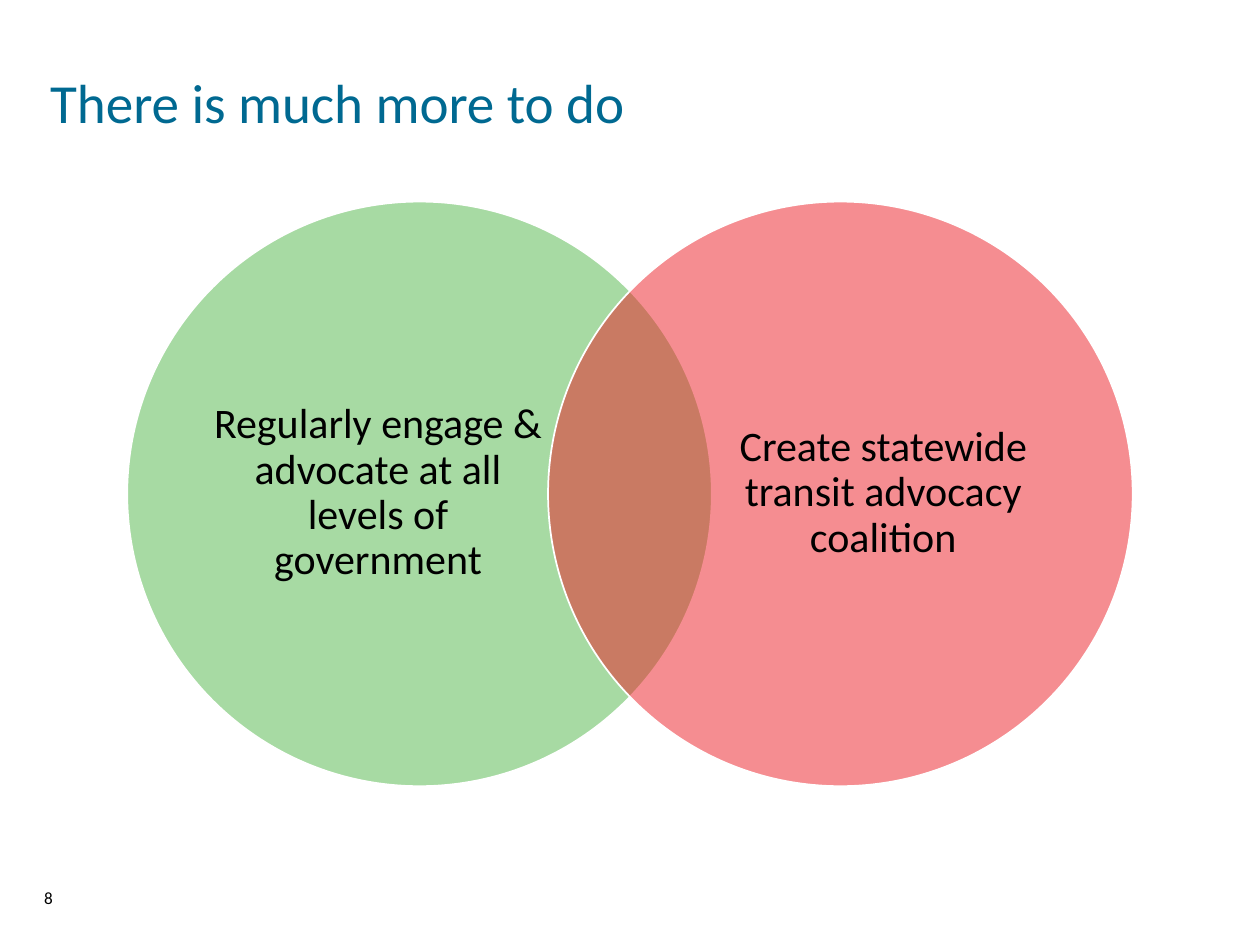
from lxml import etree
from pptx import Presentation
from pptx.dml.color import RGBColor
from pptx.enum.shapes import MSO_SHAPE as Shape
from pptx.enum.text import MSO_ANCHOR as Anchor, PP_ALIGN as Align
from pptx.oxml.ns import qn
from pptx.util import Inches, Pt

BLACK = RGBColor(0x00, 0x00, 0x00)
WHITE = RGBColor(0xFF, 0xFF, 0xFF)
BLUE = RGBColor(0x00, 0x69, 0x91)
GREEN = RGBColor(0x50, 0xB7, 0x48)
RED = RGBColor(0xEC, 0x1C, 0x24)

deck = Presentation()
deck.slide_width, deck.slide_height = Inches(10), Inches(7.5)
slide = deck.slides.add_slide(deck.slide_layouts[6])


def add_text(words, box, size, color=BLACK, anchor=Anchor.MIDDLE,
             align=Align.LEFT, inset=0, spacing=0.9):
    """Add a one-paragraph text box; box is left, top, width, height in inches."""
    frame = slide.shapes.add_textbox(*map(Inches, box)).text_frame
    frame.word_wrap = True
    frame.vertical_anchor = anchor
    for side in ("left", "top", "right", "bottom"):
        setattr(frame, f"margin_{side}", Inches(inset))
    para = frame.paragraphs[0]
    para.text = words
    para.alignment = align
    para.line_spacing = spacing
    for key, value in {"name": "Calibri", "size": Pt(size)}.items():
        setattr(para.font, key, value)
    para.font.color.rgb = color


add_text("8", (0.35, 7.05, 0.94, 0.16), 9.8, anchor=Anchor.BOTTOM, spacing=1)
add_text("There is much more to do", (0.3, 0.18, 9.4, 1.32), 31.5, BLUE, inset=0.1)

# Overlapping circles: left edge, fill, label left edge, label
circles = [
    (1.01, GREEN, 1.66, "Regularly engage & advocate at all levels of government"),
    (4.35, RED, 5.67, "Create statewide transit advocacy coalition"),
]
for left, color, label_left, label in circles:
    circle = slide.shapes.add_shape(
        Shape.OVAL, Inches(left), Inches(1.6), Inches(4.64), Inches(4.64))
    circle.shadow.inherit = False
    circle.fill.solid()
    circle.fill.fore_color.rgb = color
    tint = circle.fill._xPr.find(qn("a:solidFill"))[0]
    etree.SubElement(tint, qn("a:alpha"), val="50000")
    circle.line.color.rgb = WHITE
    circle.line.width = Pt(1)
    add_text(label, (label_left, 2.14, 2.68, 3.55), 24, align=Align.CENTER)

deck.save("out.pptx")
